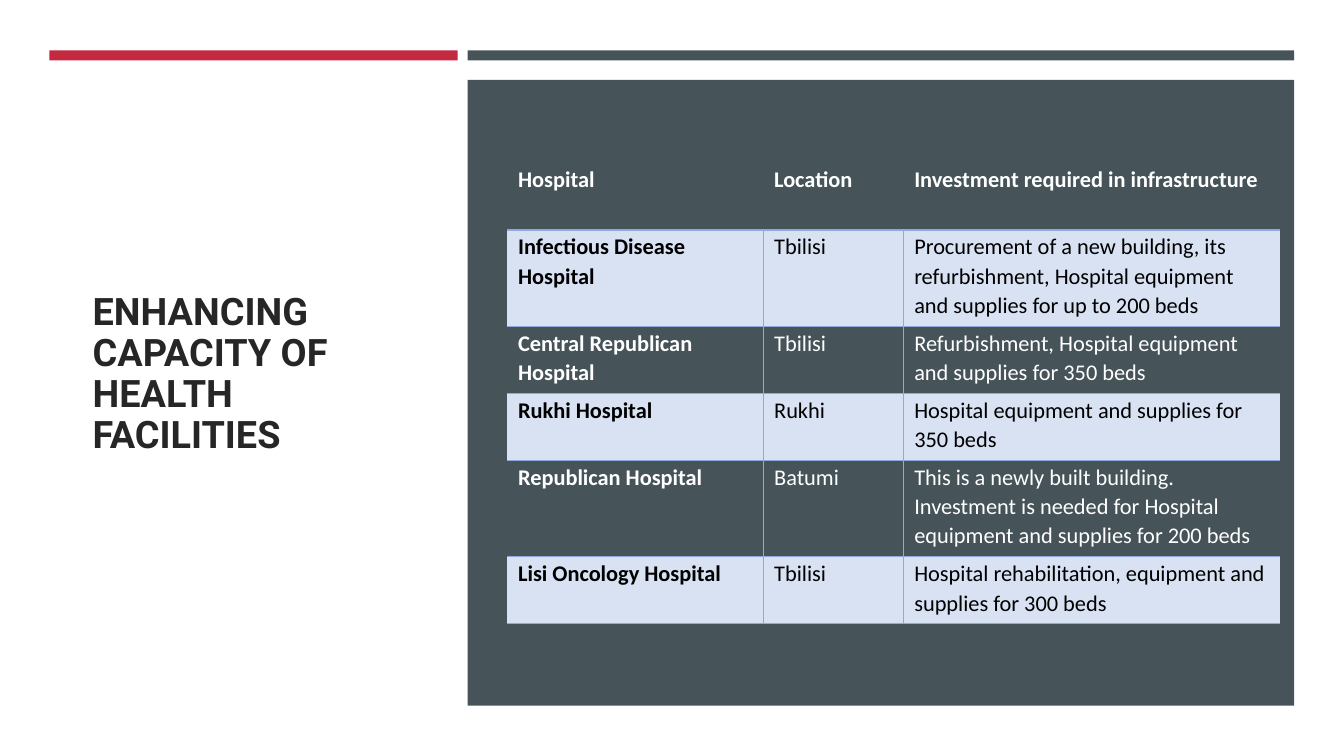
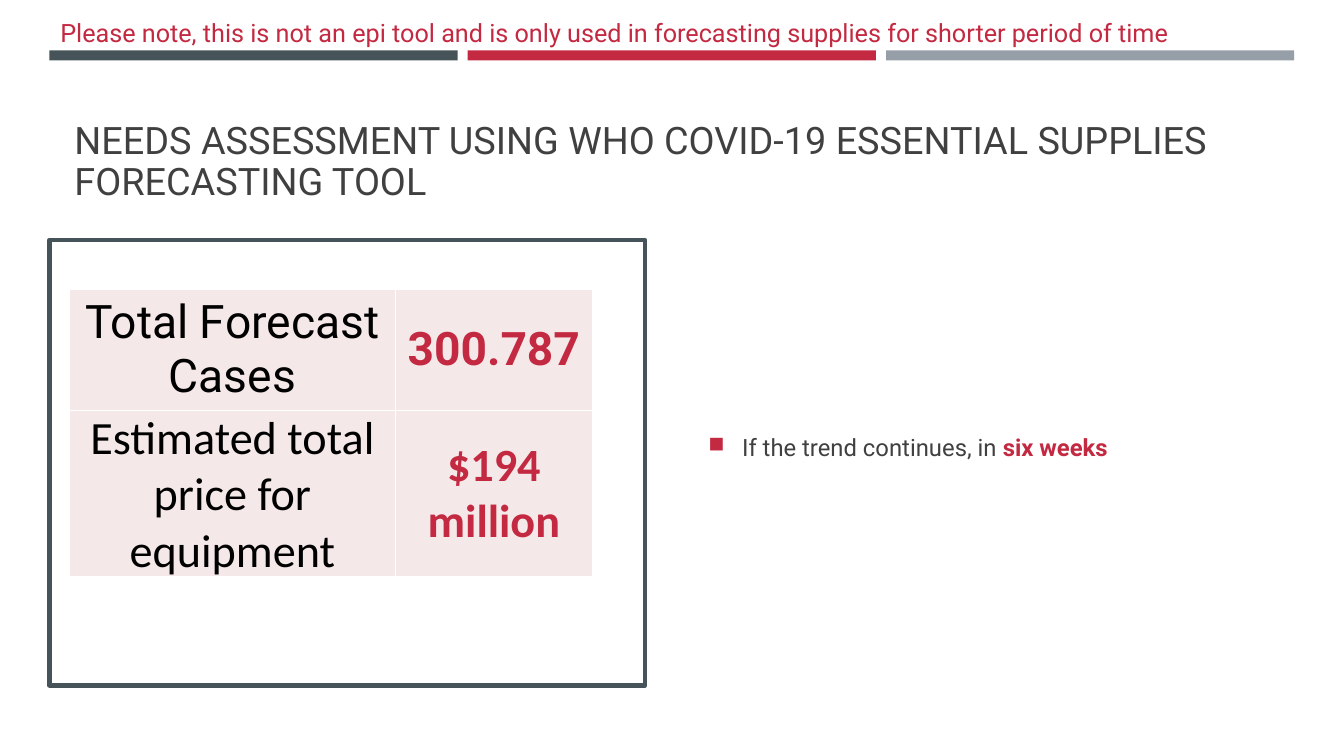
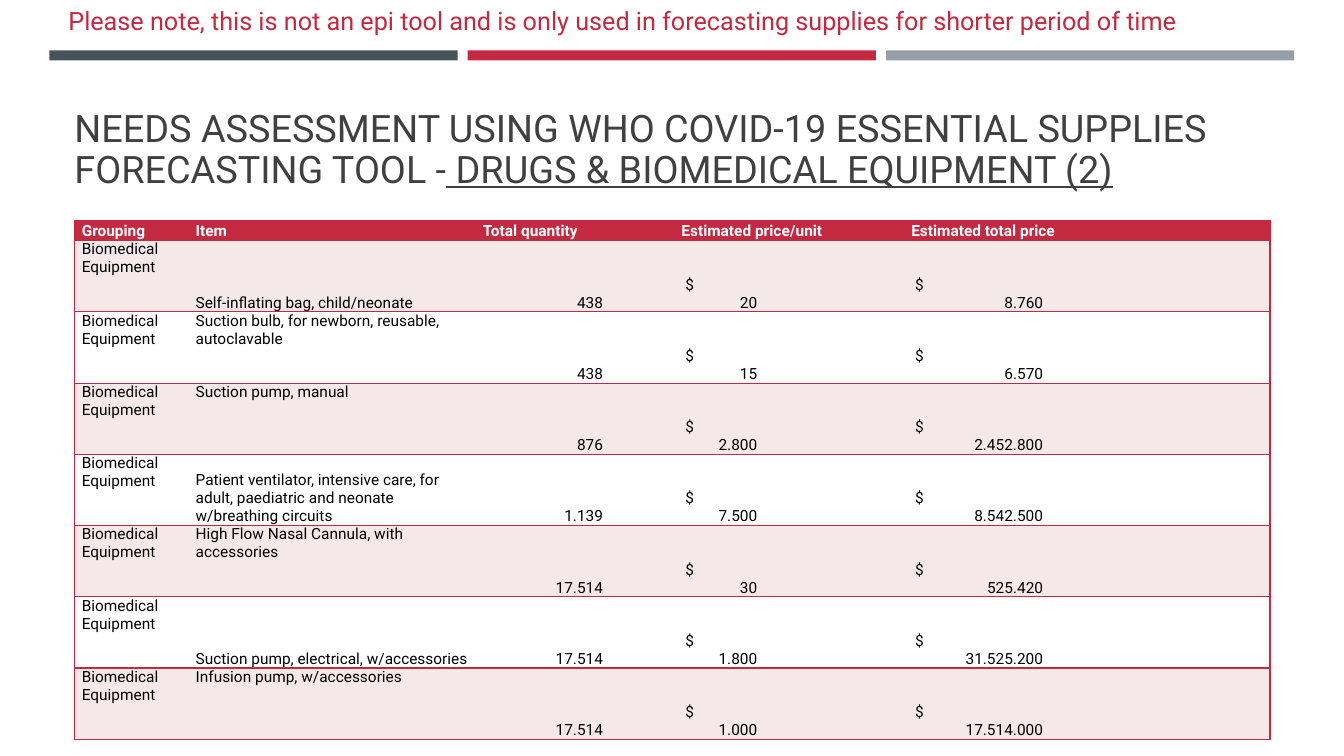
from lxml import etree
from pptx import Presentation
from pptx.dml.color import RGBColor
from pptx.enum import shapes, text
from pptx.oxml import ns
from pptx.util import Pt

# Shared look
RED = RGBColor(0xC3, 0x29, 0x41)
SLATE = RGBColor(0x46, 0x53, 0x59)
GREY = RGBColor(0x96, 0x9F, 0xA7)
WHITE = RGBColor(0xFF, 0xFF, 0xFF)
BLACK = RGBColor(0, 0, 0)
INK = RGBColor(0x26, 0x26, 0x26)
TITLE_GREY = RGBColor(0x40, 0x40, 0x40)
PINK = RGBColor(0xF5, 0xE8, 0xE9)
PALE_BLUE = RGBColor(0xD9, 0xE2, 0xF3)
RULE_BLUE = RGBColor(0x8E, 0xAA, 0xDB)
ROBOTO, CALIBRI = "Roboto", "Calibri"

LEFT, BAND_TOP, BAND_WIDTH, BAND_HEIGHT, BAND_GAP = 35.3, 36, 291.6, 7.2, 7.2
NO_TABLE_STYLE = "{2D5ABB26-0587-4C30-8999-92F81FD0307C}"
TOP, MIDDLE, BOTTOM = (text.MSO_ANCHOR.TOP, text.MSO_ANCHOR.MIDDLE,
                       text.MSO_ANCHOR.BOTTOM)
ALIGN = text.PP_ALIGN
FORECAST_TITLE = ("NEEDS ASSESSMENT USING WHO COVID-19 ESSENTIAL SUPPLIES "
                  "FORECASTING TOOL")
NOTE = ("Please note, this is not an epi tool and is only used in "
        "forecasting supplies for shorter period of time")

# Slide content
HOSPITALS = [
    ("Hospital", "Location", "Investment required in infrastructure"),
    ("Infectious Disease Hospital", "Tbilisi",
     "Procurement of a new building, its refurbishment, Hospital equipment "
     "and supplies for up to 200 beds"),
    ("Central Republican Hospital", "Tbilisi",
     "Refurbishment, Hospital equipment and supplies for 350 beds"),
    ("Rukhi Hospital", "Rukhi", "Hospital equipment and supplies for 350 beds"),
    ("Republican Hospital", "Batumi",
     "This is a newly built building. Investment is needed for Hospital "
     "equipment and supplies for 200 beds"),
    ("Lisi Oncology Hospital", "Tbilisi",
     "Hospital rehabilitation, equipment and supplies for 300 beds"),
]
FORECAST = [
    ("Total Forecast Cases", "300.787", ROBOTO),
    ("Estimated total price for equipment", "$194 million", CALIBRI),
]
EQUIPMENT_HEADS = ["Grouping", "Item", "Total quantity",
                   "Estimated price/unit", "Estimated total price"]
EQUIPMENT = [
    ("Self-inflating bag, child/neonate", BOTTOM, "438", "20", "8.760"),
    ("Suction bulb, for newborn, reusable, autoclavable", TOP,
     "438", "15", "6.570"),
    ("Suction pump, manual", TOP, "876", "2.800", "2.452.800"),
    ("Patient ventilator, intensive care, for adult, paediatric and neonate "
     "w/breathing circuits", BOTTOM, "1.139", "7.500", "8.542.500"),
    ("High Flow Nasal Cannula, with accessories", TOP,
     "17.514", "30", "525.420"),
    ("Suction pump, electrical, w/accessories", BOTTOM,
     "17.514", "1.800", "31.525.200"),
    ("Infusion pump, w/accessories", TOP, "17.514", "1.000", "17.514.000"),
]


def set_font(target, name, size, colour, bold=False):
    font = target.font
    font.name, font.size, font.bold = name, Pt(size), bold
    font.color.rgb = colour


def add_box(slide, left, top, width, height, fill, line=None):
    box = slide.shapes.add_shape(shapes.MSO_SHAPE.RECTANGLE, Pt(left), Pt(top),
                                 Pt(width), Pt(height))
    box.shadow.inherit = False
    box.fill.solid()
    box.fill.fore_color.rgb = fill
    if line is None:
        box.line.fill.background()
    else:
        box.line.color.rgb = line
        box.line.width = Pt(3)


def add_bands(slide, *bands):
    """Each band is a colour and the number of thirds it spans."""
    left = LEFT
    for colour, span in bands:
        width = span * BAND_WIDTH + (span - 1) * BAND_GAP
        add_box(slide, left, BAND_TOP, width, BAND_HEIGHT, colour)
        left += width + BAND_GAP


def set_title(slide, frame, words, colour, bold=False, anchor=BOTTOM):
    title = slide.shapes.title
    title.left, title.top, title.width, title.height = map(Pt, frame)
    body = title.text_frame
    body.auto_size = text.MSO_AUTO_SIZE.NONE
    body.word_wrap = True
    body.vertical_anchor = anchor
    heading = body.paragraphs[0]
    heading.text = words
    heading.alignment = ALIGN.LEFT
    heading.line_spacing = 0.9
    set_font(heading, ROBOTO, 27, colour, bold)
    return heading


def add_text(slide, left, top, width, height, anchor=TOP):
    body = slide.shapes.add_textbox(Pt(left), Pt(top), Pt(width),
                                    Pt(height)).text_frame
    body.word_wrap = True
    body.vertical_anchor = anchor
    return body.paragraphs[0]


def add_note(slide, left, top):
    note = add_text(slide, left, top, 900, 29)
    note.text = NOTE
    set_font(note, ROBOTO, 18, RED)


def add_square_bullet(paragraph, indent):
    props = paragraph._p.get_or_add_pPr()
    props.set("marL", str(Pt(indent)))
    props.set("indent", str(-Pt(indent)))
    colour = etree.SubElement(props, ns.qn("a:buClr"))
    etree.SubElement(colour, ns.qn("a:srgbClr"), val=str(RED))
    etree.SubElement(props, ns.qn("a:buSzPct"), val="92000")
    etree.SubElement(props, ns.qn("a:buChar"), char="■")


def add_grid(slide, left, top, widths, heights):
    grid = slide.shapes.add_table(len(heights), len(widths), Pt(left), Pt(top),
                                  Pt(sum(widths)), Pt(sum(heights))).table
    grid._tbl.tblPr.find(ns.qn("a:tableStyleId")).text = NO_TABLE_STYLE
    grid.first_row = grid.horz_banding = False
    for column, width in zip(grid.columns, widths):
        column.width = Pt(width)
    for row, height in zip(grid.rows, heights):
        row.height = Pt(height)
    return grid


def fill_cell(cell, lines, font, fill=None, anchor=TOP, insets=(0, 0, 0, 0),
              aligns=(ALIGN.LEFT,), spacing=None):
    """Font is name, size, colour, bold; insets are left, top, right, bottom."""
    (cell.margin_left, cell.margin_top,
     cell.margin_right, cell.margin_bottom) = map(Pt, insets)
    cell.vertical_anchor = anchor
    if fill is None:
        cell.fill.background()
    else:
        cell.fill.solid()
        cell.fill.fore_color.rgb = fill
    cell.text = "\n".join(lines)
    for paragraph, align in zip(cell.text_frame.paragraphs, aligns):
        paragraph.alignment = align
        if spacing:
            paragraph.line_spacing = spacing
        set_font(paragraph, *font)


def rule_cell(cell, colour, **widths):
    """Draw the named sides (L, R, T, B) at the given widths."""
    props = cell._tc.get_or_add_tcPr()
    sides = [side for side in "LRTB" if side in widths]
    for place, side in enumerate(sides):
        line = etree.Element(ns.qn("a:ln" + side), w=str(Pt(widths[side])))
        fill = etree.SubElement(line, ns.qn("a:solidFill"))
        etree.SubElement(fill, ns.qn("a:srgbClr"), val=str(colour))
        props.insert(place, line)


def build_hospitals(slide):
    set_title(slide, (59, 82, 240.5, 371),
              "ENHANCING CAPACITY OF HEALTH FACILITIES", INK, True, MIDDLE)
    add_bands(slide, (RED, 1), (SLATE, 2))
    add_box(slide, 334.1, 57, 590.4, 447, SLATE)

    grid = add_grid(slide, 362.2, 115.9, [182.9, 100.1, 269.3],
                    [48.2, 69, 47.8, 47.8, 69, 47.8])
    for r, record in enumerate(HOSPITALS):
        shaded = r % 2 == 1
        for c, words in enumerate(record):
            cell = grid.cell(r, c)
            fill_cell(cell, [words],
                      (CALIBRI, 16, BLACK if shaded else WHITE,
                       r == 0 or c == 0),
                      PALE_BLUE if shaded else None,
                      insets=(7.9, 1.4, 7.9, 0), spacing=1.07)
            sides = {"B": 1 if r else 1.5}
            if r and c:
                sides["L"] = 1
            if r and c < 2:
                sides["R"] = 1
            rule_cell(cell, RULE_BLUE, **sides)


def build_forecast(slide):
    set_title(slide, (46, 55.5, 868, 93.5), FORECAST_TITLE, TITLE_GREY)
    add_bands(slide, (SLATE, 1), (RED, 1), (GREY, 1))
    add_box(slide, LEFT, 171.4, 425.5, 318.2, WHITE, SLATE)

    trend = add_text(slide, 499, 171.4, 415, 294, MIDDLE)
    trend.line_spacing = 1.1
    add_square_bullet(trend, 24)
    for words, colour, bold in (("If the trend continues, in ", TITLE_GREY, False),
                                ("six weeks", RED, True)):
        run = trend.add_run()
        run.text = words
        set_font(run, ROBOTO, 17, colour, bold)

    add_note(slide, 36, 8.6)

    grid = add_grid(slide, 49.8, 206.8, [232.5, 141], [86.4, 119])
    for r, (label, figure, name) in enumerate(FORECAST):
        for c, (words, colour) in enumerate(((label, BLACK), (figure, RED))):
            cell = grid.cell(r, c)
            fill_cell(cell, [words], (name, 33, colour, c == 1), PINK, MIDDLE,
                      aligns=[ALIGN.CENTER])
            rule_cell(cell, WHITE, L=1, R=1, T=1, B=1)


def build_equipment(slide):
    add_bands(slide, (SLATE, 1), (RED, 1), (GREY, 1))
    heading = set_title(slide, (46, 46.8, 868, 93.5), FORECAST_TITLE + " -",
                        TITLE_GREY)
    subject = heading.add_run()
    subject.text = " DRUGS & BIOMEDICAL EQUIPMENT (2)"
    subject.font.underline = True

    grid = add_grid(slide, 53.4, 157.5, [81.4, 205.2, 141.8, 164.2, 261.2],
                    [14.4] + [50.9] * len(EQUIPMENT))
    plain = (5, 0, 5, 0)
    for c, words in enumerate(EQUIPMENT_HEADS):
        fill_cell(grid.cell(0, c), [words], (ROBOTO, 11, WHITE, True), RED,
                  BOTTOM, plain)
    left, right = [ALIGN.LEFT], [ALIGN.RIGHT]
    for r, (item, anchor, quantity, price, total) in enumerate(EQUIPMENT, 1):
        # The right insets line the figures up inside their wide columns
        entries = [
            (["Biomedical Equipment"], TOP, plain, left),
            ([item], anchor, plain, left),
            ([quantity], BOTTOM, (5, 0, 51, 0), right),
            (["$", price], BOTTOM, (7.8, 0, 105, 0), left + right),
            (["$", total], BOTTOM, (7.8, 0, 162, 0), left + right),
        ]
        for c, (lines, where, insets, aligns) in enumerate(entries):
            fill_cell(grid.cell(r, c), lines, (ROBOTO, 11, BLACK),
                      PINK if r % 2 else WHITE, where, insets, aligns)
    for row in grid.rows:
        for c, cell in enumerate(row.cells):
            edge = {0: {"L": 1}, 4: {"R": 1}}.get(c, {})
            rule_cell(cell, RED, T=1, B=1, **edge)

    add_note(slide, 41.8, 0)


def main():
    deck = Presentation()
    deck.slide_width, deck.slide_height = Pt(960), Pt(540)
    title_only = deck.slide_layouts[5]
    for build in (build_hospitals, build_forecast, build_equipment):
        build(deck.slides.add_slide(title_only))
    deck.save("out.pptx")


if __name__ == "__main__":
    main()
